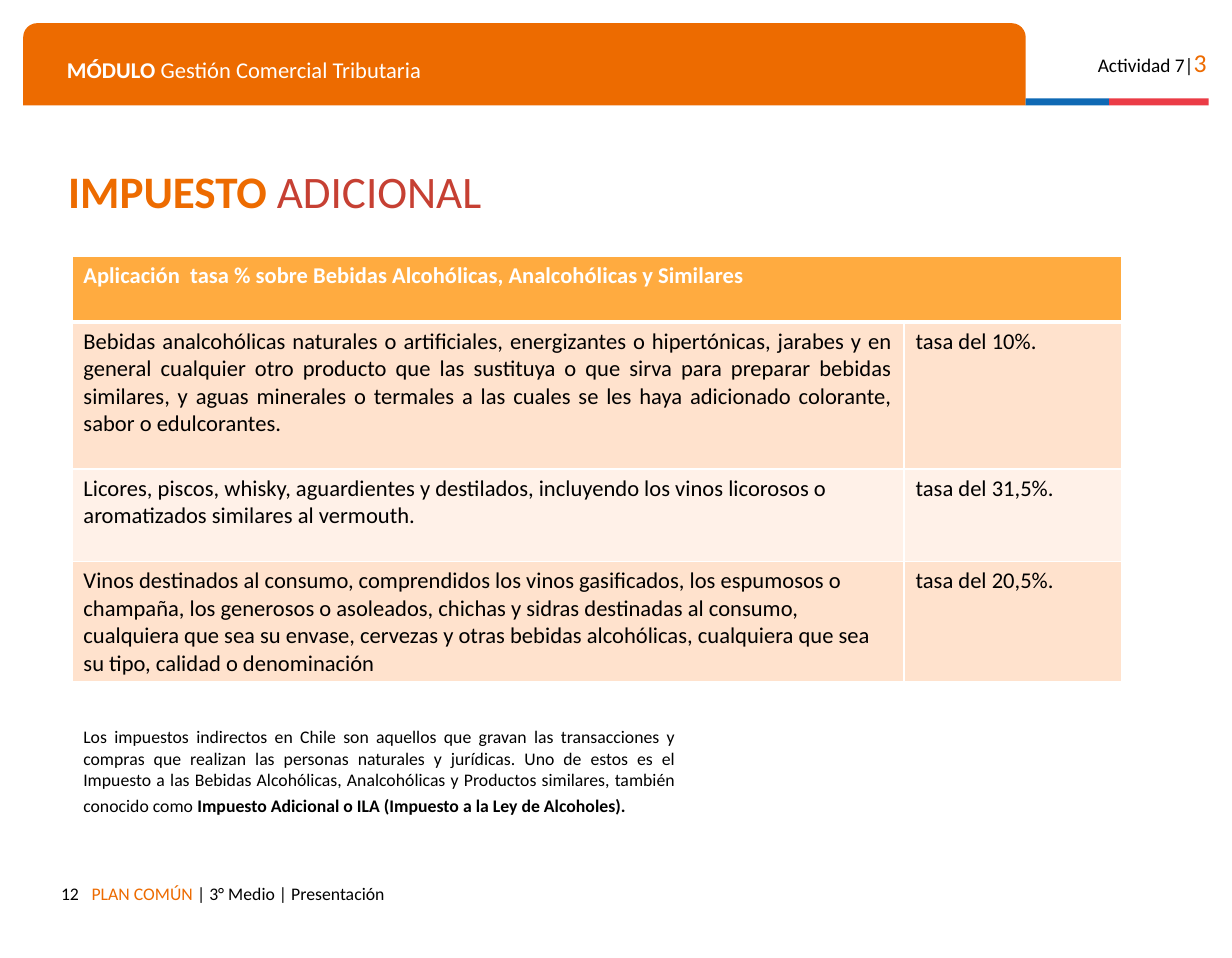
import dataclasses

import pptx
import pptx.dml.color
import pptx.enum.shapes
import pptx.enum.text
import pptx.oxml.ns
import pptx.util
from lxml import etree

PX = 9144  # EMU in one px, 100 px to the inch
SHAPES = pptx.enum.shapes.MSO_SHAPE
ALIGN = pptx.enum.text.PP_ALIGN
ANCHOR = pptx.enum.text.MSO_ANCHOR


@dataclasses.dataclass(frozen=True)
class Theme:
    font: str = "Calibri"
    orange: str = "ED6B00"
    blue: str = "0F69B4"
    red: str = "EB3C46"
    brick: str = "C64033"
    black: str = "000000"
    white: str = "FFFFFF"
    header: str = "FFAB40"
    bands: tuple = ("FFE2CD", "FFF1E8")
    title: int = 28
    number: int = 16
    body: int = 14
    label: int = 12
    small: int = 11


def px(length):
    return pptx.util.Emu(length * PX)


def rgb(color):
    return pptx.dml.color.RGBColor.from_string(color)


class Slide:
    def __init__(self, deck, theme):
        self.theme = theme
        self.page = deck.slides.add_slide(deck.slide_layouts[6])

    def bar(self, kind, box, color, adjustments=()):
        shape = self.page.shapes.add_shape(kind, *map(px, box))
        shape.shadow.inherit = False
        shape.fill.solid()
        shape.fill.fore_color.rgb = rgb(color)
        shape.line.fill.background()
        for index, value in enumerate(adjustments):
            shape.adjustments[index] = value

    def add_runs(self, para, runs, align=ALIGN.LEFT):
        """Fill a paragraph with runs of (words, size, color, bold)."""
        para.alignment = align
        for words, size, color, bold in runs:
            span = para.add_run()
            span.text = words
            span.font.name = self.theme.font
            span.font.size = pptx.util.Pt(size)
            span.font.bold = bold
            span.font.color.rgb = rgb(color)

    def text(self, box, runs, align=ALIGN.LEFT, anchor=ANCHOR.TOP,
             left=10, pad=10, spacing=None):
        frame = self.page.shapes.add_textbox(*map(px, box)).text_frame
        frame.word_wrap = True
        frame.vertical_anchor = anchor
        frame.margin_left, frame.margin_right = px(left), px(10)
        frame.margin_top = frame.margin_bottom = px(pad)
        para = frame.paragraphs[0]
        para.line_spacing = spacing
        self.add_runs(para, runs, align)

    def borders(self, cell, top, bottom):
        """Draw white cell borders; top and bottom are widths in points."""
        properties = cell._tc.get_or_add_tcPr()
        for side, width in (("L", 1), ("R", 1), ("T", top), ("B", bottom)):
            line = etree.SubElement(properties, pptx.oxml.ns.qn(f"a:ln{side}"),
                                    w=str(pptx.util.Pt(width)))
            fill = etree.SubElement(line, pptx.oxml.ns.qn("a:solidFill"))
            etree.SubElement(fill, pptx.oxml.ns.qn("a:srgbClr"), val=self.theme.white)

    def table(self, left, top, widths, heights, heading, rows):
        theme = self.theme
        frame = self.page.shapes.add_table(
            len(heights), len(widths),
            *map(px, (left, top, sum(widths), sum(heights))))
        grid = frame.table
        grid.first_row = grid.horz_banding = False
        for column, width in zip(grid.columns, widths):
            column.width = px(width)
        for row, height in zip(grid.rows, heights):
            row.height = px(height)
        grid.cell(0, 0).merge(grid.cell(0, len(widths) - 1))

        for r, values in enumerate([(heading, "")] + rows):
            is_header = r == 0
            for c, words in enumerate(values):
                cell = grid.cell(r, c)
                cell.margin_left = cell.margin_right = px(10)
                cell.margin_top = cell.margin_bottom = px(5)
                self.borders(cell, 3 if r == 1 else 1, 3 if is_header else 1)
                cell.fill.solid()
                cell.fill.fore_color.rgb = rgb(
                    theme.header if is_header else theme.bands[(r - 1) % 2])
                if words:
                    color = theme.white if is_header else theme.black
                    self.add_runs(cell.text_frame.paragraphs[0],
                                  [(words, theme.body, color, is_header)],
                                  ALIGN.JUSTIFY if (r, c) == (1, 0) else ALIGN.LEFT)


def main():
    deck = pptx.Presentation()
    deck.slide_width, deck.slide_height = px(1063), px(827)
    theme = Theme()
    slide = Slide(deck, theme)

    slide.bar(SHAPES.ROUND_2_SAME_RECTANGLE, (20, 20, 865, 71), theme.orange, (0.17, 0))
    slide.bar(SHAPES.RECTANGLE, (885, 85, 72, 6), theme.blue)
    slide.bar(SHAPES.RECTANGLE, (957, 85, 86, 6), theme.red)

    slide.text((48, 38, 814, 35), [
        ("MÓDULO", theme.body, theme.white, True),
        (" Gestión Comercial Tributaria", theme.body, theme.white, False)])
    slide.text((923, 30, 128, 38), [
        ("Actividad 7|", theme.label, theme.black, False),
        ("3", theme.number, theme.orange, False)], ALIGN.RIGHT)
    slide.text((20, 753, 58, 29), [("12", theme.small, theme.black, False)], ALIGN.RIGHT)
    slide.text((41, 753, 742, 38), [
        ("PLAN COMÚN ", theme.small, theme.orange, False),
        ("| 3° Medio | Presentación", theme.small, theme.black, False)], left=38)

    slide.table(
        62, 221, (718, 188), (57, 127, 80, 103),
        "Aplicación  tasa % sobre Bebidas Alcohólicas, Analcohólicas y Similares",
        [("Bebidas analcohólicas naturales o artificiales, energizantes o "
          "hipertónicas, jarabes y en general cualquier otro producto que las "
          "sustituya o que sirva para preparar bebidas similares, y aguas minerales "
          "o termales a las cuales se les haya adicionado colorante, sabor o "
          "edulcorantes.", "tasa del 10%."),
         ("Licores, piscos, whisky, aguardientes y destilados, incluyendo los vinos "
          "licorosos o aromatizados similares al vermouth.", "tasa del 31,5%."),
         ("Vinos destinados al consumo, comprendidos los vinos gasificados, los "
          "espumosos o champaña, los generosos o asoleados, chichas y sidras "
          "destinadas al consumo, cualquiera que sea su envase, cervezas y otras "
          "bebidas alcohólicas, cualquiera que sea su tipo, calidad o denominación",
          "tasa del 20,5%.")])

    slide.text((49, 151, 979, 35), [
        ("IMPUESTO ", theme.title, theme.orange, True),
        ("ADICIONAL", theme.title, theme.brick, False)],
        anchor=ANCHOR.MIDDLE, spacing=0.8)
    slide.text((62, 622, 531, 89), [
        ("Los impuestos indirectos en Chile son aquellos que gravan las "
         "transacciones y compras que realizan las personas naturales y jurídicas. "
         "Uno de estos es el Impuesto a las Bebidas Alcohólicas, Analcohólicas y "
         "Productos similares, también conocido como ",
         theme.small, theme.black, False),
        ("Impuesto Adicional o ILA (Impuesto a la Ley de Alcoholes).",
         theme.small, theme.black, True),
        (" ", theme.body, theme.black, True)], ALIGN.JUSTIFY, pad=5)

    deck.save("out.pptx")


if __name__ == "__main__":
    main()
